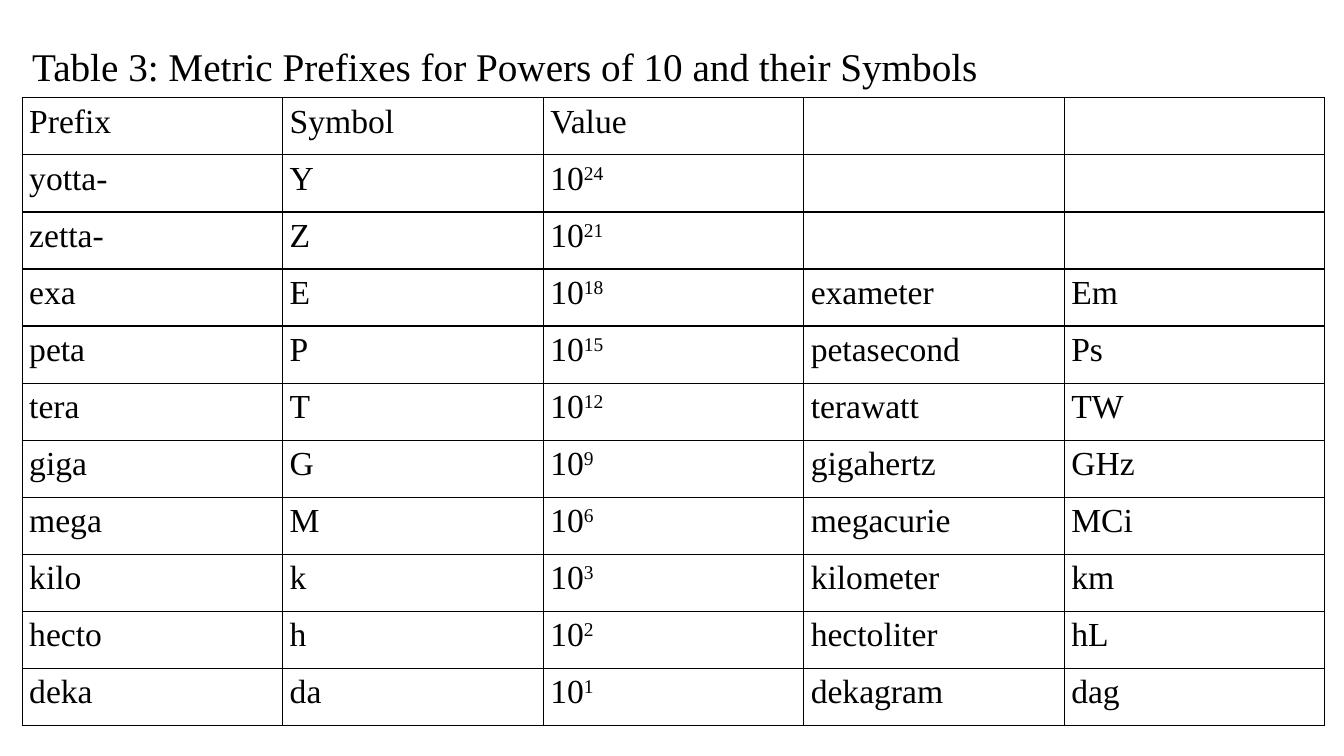
"""Build a slide with a table of metric prefixes."""
from lxml import etree
from pptx import Presentation
from pptx.dml.color import RGBColor
from pptx.enum.text import MSO_ANCHOR, PP_ALIGN
from pptx.oxml.ns import qn
from pptx.util import Inches, Pt

MIDDLE = MSO_ANCHOR.MIDDLE
JUSTIFY = PP_ALIGN.JUSTIFY

TITLE = "Table 3: Metric Prefixes for Powers of 10 and their Symbols"
HEAD = ("Prefix", "Symbol", "Value", "", "")
PREFIXES = [
    ("yotta-", "Y", 24, "", ""),
    ("zetta-", "Z", 21, "", ""),
    ("exa", "E", 18, "exameter", "Em"),
    ("peta", "P", 15, "petasecond", "Ps"),
    ("tera", "T", 12, "terawatt", "TW"),
    ("giga", "G", 9, "gigahertz", "GHz"),
    ("mega", "M", 6, "megacurie", "MCi"),
    ("kilo", "k", 3, "kilometer", "km"),
    ("hecto", "h", 2, "hectoliter", "hL"),
    ("deka", "da", 1, "dekagram", "dag"),
]
THEME = {"font": "Times New Roman", "ink": "000000", "title": 28, "body": 24, "line": 1}
LEFT, TOP, WIDTH, HEIGHT = 0.22, 0.97, 12.92, 6.23


def style(para, size):
    para.alignment = JUSTIFY
    for run in para.runs:
        run.font.name = THEME["font"]
        run.font.size = Pt(size)
        run.font.color.rgb = RGBColor.from_string(THEME["ink"])


def border(cell):
    props = cell._tc.get_or_add_tcPr()
    for spot, side in enumerate(("lnL", "lnR", "lnT", "lnB")):
        line = etree.Element(qn(f"a:{side}"), w=str(Pt(THEME["line"])))
        fill = etree.SubElement(line, qn("a:solidFill"))
        etree.SubElement(fill, qn("a:srgbClr"), val=THEME["ink"])
        props.insert(spot, line)


def fill_cell(cell, value):
    cell.fill.background()
    cell.margin_left = cell.margin_right = Inches(0.07)
    cell.margin_top = cell.margin_bottom = 0
    border(cell)
    para = cell.text_frame.paragraphs[0]
    para.line_spacing = 1.15
    if isinstance(value, int):
        para.text = "10"
        power = para.add_run()
        power.text = str(value)
        power._r.get_or_add_rPr().set("baseline", "30000")
    else:
        para.text = value
    style(para, THEME["body"])


def add_title(slide):
    box = slide.shapes.add_textbox(Inches(LEFT), Inches(0.35), Inches(12.81), Inches(0.61))
    frame = box.text_frame
    frame.word_wrap = True
    frame.vertical_anchor = MIDDLE
    frame.text = TITLE
    style(frame.paragraphs[0], THEME["title"])


def add_grid(slide):
    rows = [HEAD, *PREFIXES]
    area = [Inches(n) for n in (LEFT, TOP, WIDTH, HEIGHT)]
    table = slide.shapes.add_table(len(rows), len(HEAD), *area).table
    table.first_row = table.horz_banding = False
    for r, row in enumerate(rows):
        for c, value in enumerate(row):
            fill_cell(table.cell(r, c), value)


def main():
    deck = Presentation()
    deck.slide_width, deck.slide_height = Inches(13.33), Inches(7.5)
    slide = deck.slides.add_slide(deck.slide_layouts[6])
    add_title(slide)
    add_grid(slide)
    deck.save("out.pptx")


if __name__ == "__main__":
    main()
